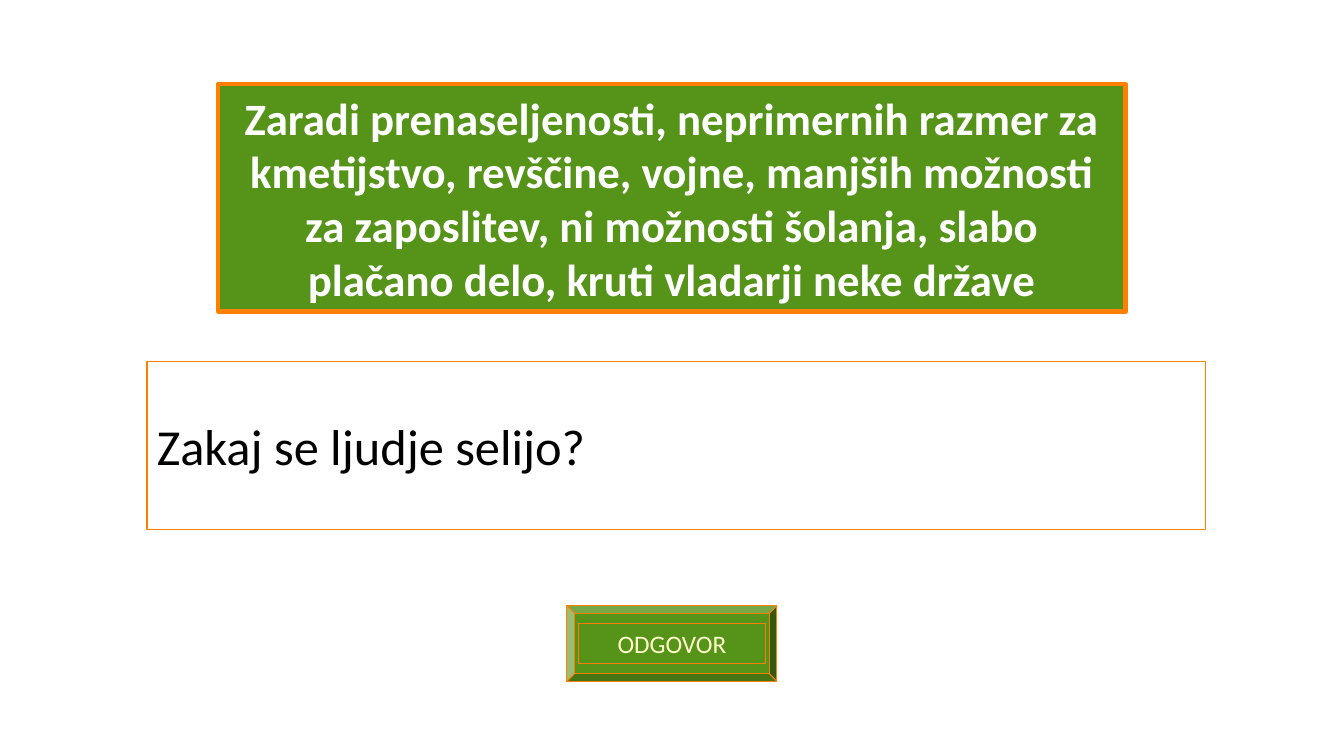
from pptx import Presentation
from pptx.dml.color import RGBColor
from pptx.enum.shapes import MSO_SHAPE
from pptx.enum.text import MSO_ANCHOR, PP_ALIGN
from pptx.util import Inches, Pt

GREEN = RGBColor(0x56, 0x93, 0x19)
ORANGE = RGBColor(0xFF, 0x7F, 0x00)
CREAM = RGBColor(0xFF, 0xFF, 0xCC)
WHITE = RGBColor(0xFF, 0xFF, 0xFF)
BLACK = RGBColor(0x00, 0x00, 0x00)

prs = Presentation()
prs.slide_width = Inches(13.33)
prs.slide_height = Inches(7.5)
slide = prs.slides.add_slide(prs.slide_layouts[6])

# Grid of 160 columns by 90 rows
COLUMN = prs.slide_width / 160
ROW = prs.slide_height / 90


def add_panel(shapes, kind, left, top, width, height, fill, line_width=0.75):
    panel = shapes.add_shape(kind, round(left * COLUMN), round(top * ROW),
                             round(width * COLUMN), round(height * ROW))
    panel.shadow.inherit = False
    panel.fill.solid()
    panel.fill.fore_color.rgb = fill
    panel.line.color.rgb = ORANGE
    panel.line.width = Pt(line_width)
    return panel


def write(panel, text, size, color, align, bold=False):
    frame = panel.text_frame
    frame.text = text
    frame.word_wrap = True
    frame.vertical_anchor = MSO_ANCHOR.MIDDLE
    paragraph = frame.paragraphs[0]
    paragraph.alignment = align
    font = paragraph.runs[0].font
    font.name = "Calibri"
    font.size = Pt(size)
    font.bold = bold
    font.color.rgb = color


# Answer button: bevelled frame with its label
button = slide.shapes.add_group_shape()
bevel = add_panel(button.shapes, MSO_SHAPE.BEVEL, 67.5, 72.1, 25, 9, GREEN)
bevel.adjustments[0] = 0.104
button_label = add_panel(button.shapes, MSO_SHAPE.RECTANGLE, 68.9, 74.2, 22.2, 4.8, GREEN)
write(button_label, "ODGOVOR", 18, CREAM, PP_ALIGN.CENTER)

# Answer
answer = add_panel(slide.shapes, MSO_SHAPE.RECTANGLE, 26, 10, 108, 27.1, GREEN, 3)
write(answer,
      "Zaradi prenaseljenosti, neprimernih razmer za kmetijstvo, revščine, vojne, "
      "manjših možnosti za zaposlitev, ni možnosti šolanja, slabo plačano delo, "
      "kruti vladarji neke države",
      32, WHITE, PP_ALIGN.CENTER, bold=True)

# Question
question = add_panel(slide.shapes, MSO_SHAPE.RECTANGLE, 17.5, 43, 126, 20, WHITE)
write(question, "Zakaj se ljudje selijo?", 36, BLACK, PP_ALIGN.LEFT)

prs.save("out.pptx")
